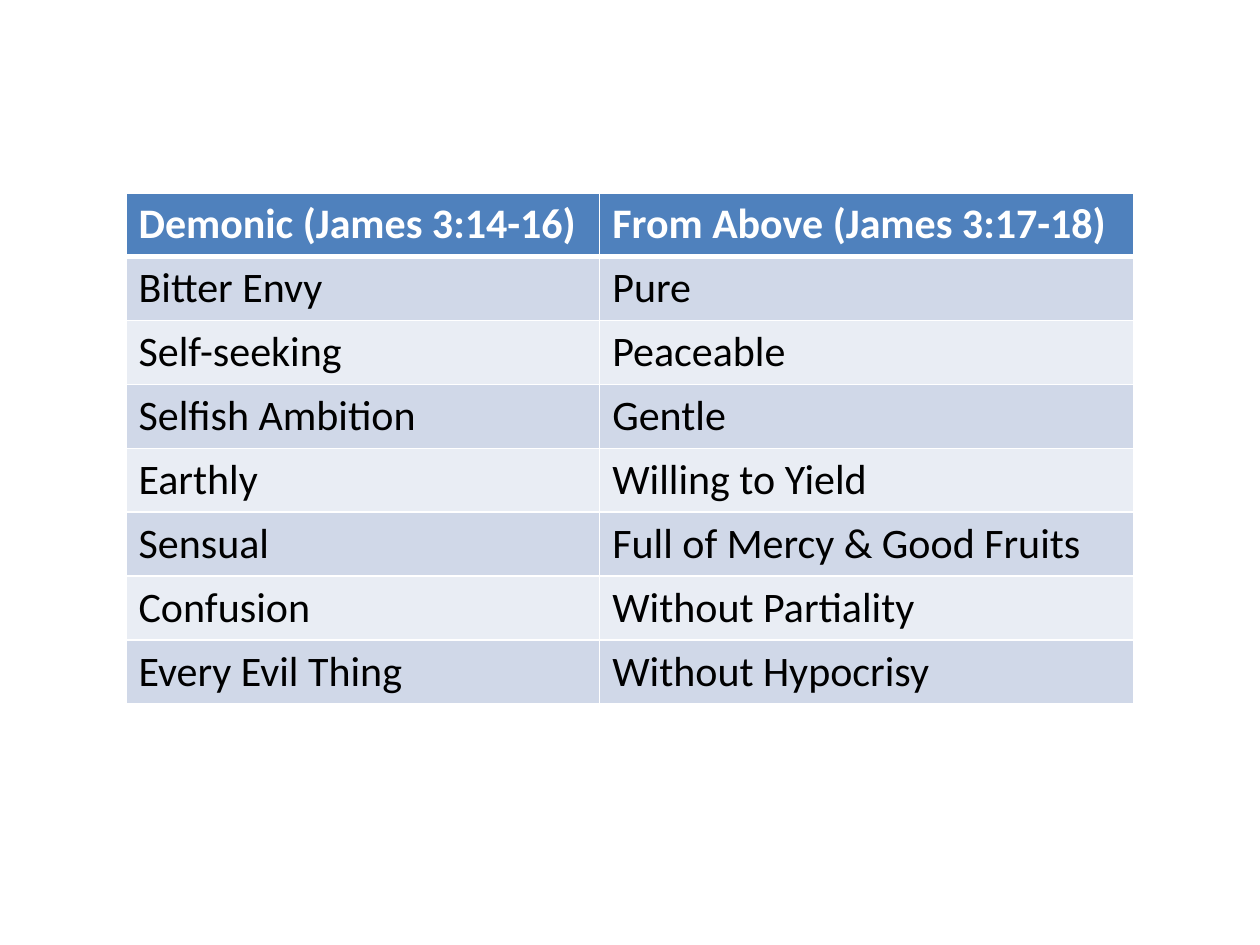
from typing import NamedTuple

from lxml import etree
from pptx import Presentation
from pptx import util as u
from pptx.dml.color import RGBColor
from pptx.oxml.ns import qn

WIDTH, HEIGHT = 10, 7.5
WHITE, BLACK = "FFFFFF", "000000"
HEADER_FILL = "4F81BD"
BAND_FILLS = ("D0D8E8", "E9EDF4")
COLUMN_SHARES = (0.47, 0.53)
ROW_HEIGHT = 0.5


class Contrast(NamedTuple):
    demonic: str
    from_above: str


ROWS = [
    Contrast("Demonic (James 3:14-16)", "From Above (James 3:17-18)"),
    Contrast("Bitter Envy", "Pure"),
    Contrast("Self-seeking", "Peaceable"),
    Contrast("Selfish Ambition", "Gentle"),
    Contrast("Earthly", "Willing to Yield"),
    Contrast("Sensual", "Full of Mercy & Good Fruits"),
    Contrast("Confusion", "Without Partiality"),
    Contrast("Every Evil Thing", "Without Hypocrisy"),
]


def color(value: str) -> RGBColor:
    return RGBColor.from_string(value)


def write(cell, content: str, *, size: float = 24, font: str = "Calibri",
          fill: str = BLACK, bold: bool = False) -> None:
    run = cell.text_frame.paragraphs[0].add_run()
    run.text = content
    run.font.size = u.Pt(size)
    run.font.name = font
    run.font.bold = bold
    run.font.color.rgb = color(fill)


def add_borders(cell, *, top: float = 1, bottom: float = 1) -> None:
    properties = cell._tc.get_or_add_tcPr()
    for side, width in (("L", 1), ("R", 1), ("T", top), ("B", bottom)):
        line = etree.SubElement(properties, qn(f"a:ln{side}"), w=str(u.Pt(width)))
        solid = etree.SubElement(line, qn("a:solidFill"))
        etree.SubElement(solid, qn("a:srgbClr"), val=WHITE)


def add_contrast_table(slide, rows: list[Contrast]) -> None:
    table_width = 0.8 * WIDTH
    table = slide.shapes.add_table(
        len(rows), len(COLUMN_SHARES), u.Inches(0.1 * WIDTH), u.Inches(1.53),
        u.Inches(table_width), u.Inches(ROW_HEIGHT * len(rows))).table
    for column, share in zip(table.columns, COLUMN_SHARES):
        column.width = u.Inches(share * table_width)

    for index, row in enumerate(rows):
        header = index == 0
        background = HEADER_FILL if header else BAND_FILLS[(index - 1) % 2]
        for cell, content in zip(table.rows[index].cells, row):
            # A thick rule separates the header from the body
            add_borders(cell, top=3 if index == 1 else 1, bottom=3 if header else 1)
            cell.fill.solid()
            cell.fill.fore_color.rgb = color(background)
            write(cell, content, fill=WHITE if header else BLACK, bold=header)


def main() -> None:
    presentation = Presentation()
    presentation.slide_width = u.Inches(WIDTH)
    presentation.slide_height = u.Inches(HEIGHT)
    slide = presentation.slides.add_slide(presentation.slide_layouts[6])
    add_contrast_table(slide, ROWS)
    presentation.save("out.pptx")


if __name__ == "__main__":
    main()
